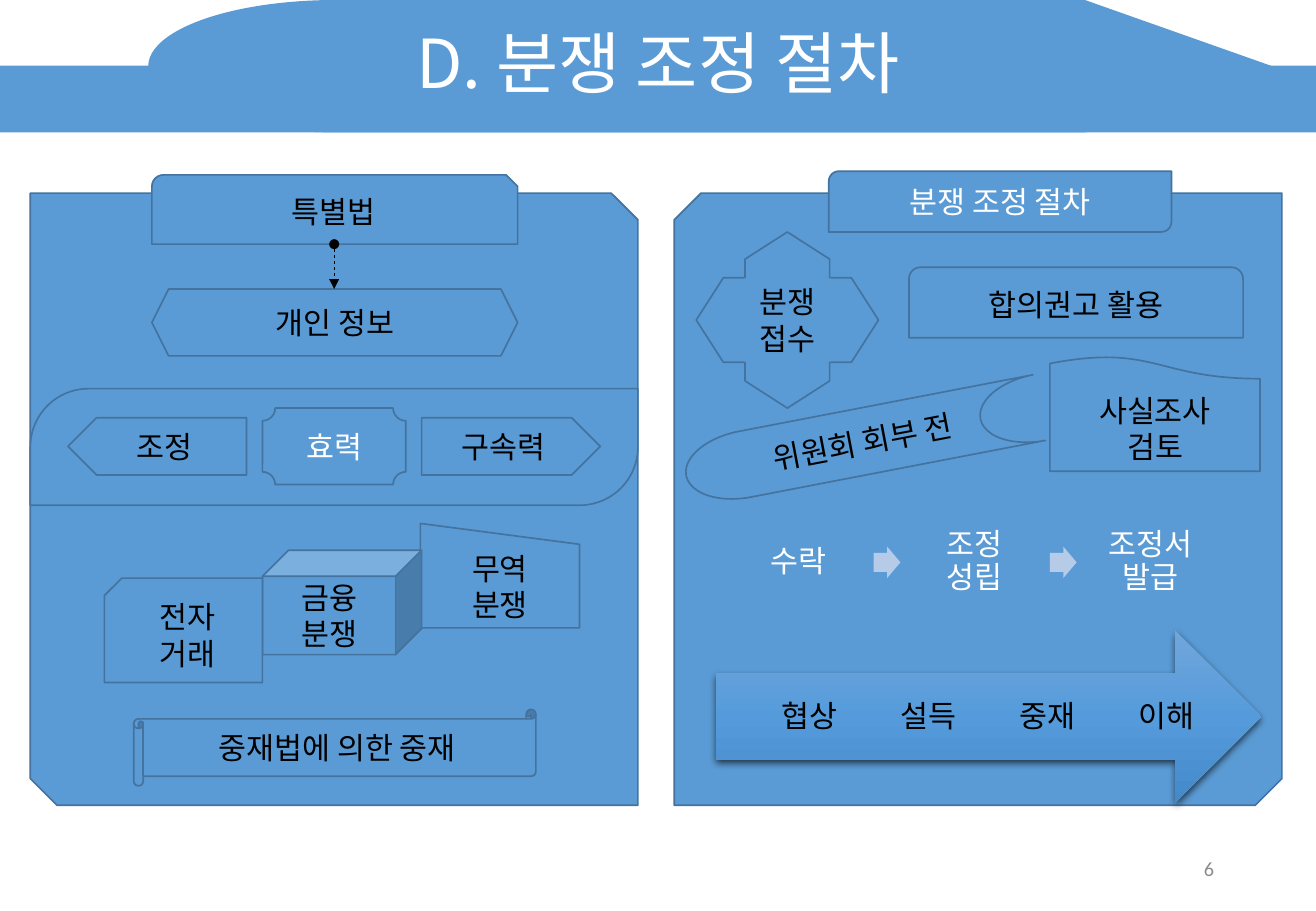
from lxml import etree
from pptx import Presentation
from pptx.dml.color import RGBColor
from pptx.enum.dml import MSO_LINE
from pptx.enum.shapes import MSO_CONNECTOR, MSO_SHAPE as S
from pptx.enum.text import MSO_ANCHOR, PP_ALIGN
from pptx.oxml.ns import qn
from pptx.util import Inches, Pt

BLUE = RGBColor(0x5B, 0x9B, 0xD5)
EDGE = RGBColor(0x43, 0x73, 0x9E)
PALE = RGBColor(0xB5, 0xCB, 0xE7)
GRAY = RGBColor(0x8C, 0x8C, 0x8C)
BLACK = RGBColor(0, 0, 0)
WHITE = RGBColor(0xFF, 0xFF, 0xFF)
ARROW_STOPS = ((0, "71A6DB"), (50, "559BDB"), (100, "448ACA"))
FONT = "Noto Sans CJK KR"


def inches(*lengths):
    return [Inches(length) for length in lengths]


def write(frame, words, color, size=18, font=FONT, align=PP_ALIGN.CENTER,
          spacing=None, margins=None, wrap=True):
    """Fill a frame; each item of words is a paragraph, a newline in it a line break."""
    frame.word_wrap = wrap
    frame.vertical_anchor = MSO_ANCHOR.MIDDLE
    if margins:
        (frame.margin_left, frame.margin_top,
         frame.margin_right, frame.margin_bottom) = inches(*margins)
    for i, content in enumerate(words):
        paragraph = frame.add_paragraph() if i else frame.paragraphs[0]
        paragraph.alignment = align
        if spacing:
            paragraph.line_spacing = spacing
        for j, line in enumerate(content.split("\n")):
            if j:
                paragraph.add_line_break()
            run = paragraph.add_run()
            run.text = line
            run.font.size = Pt(size)
            run.font.name = font
            run.font.color.rgb = color
            latin = run.font._element.find(qn("a:latin"))
            latin.addnext(latin.makeelement(qn("a:ea"), {"typeface": font}))


def add_block(slide, preset, box, *words, color=BLACK, fill=BLUE, edge=EDGE,
              adj=(), flip=None, rotation=0, **style):
    block = slide.shapes.add_shape(preset, *inches(*box))
    block.shadow.inherit = False
    block.fill.solid()
    block.fill.fore_color.rgb = fill
    if edge:
        block.line.color.rgb = edge
        block.line.width = Pt(1)
    else:
        block.line.fill.background()
    for i, value in enumerate(adj):
        block.adjustments[i] = value
    if flip:
        block.element.spPr.xfrm.set(flip, "1")
    block.rotation = rotation
    write(block.text_frame, words, color, **style)
    return block


def add_label(slide, box, *words, color=BLACK, **style):
    label = slide.shapes.add_textbox(*inches(*box))
    write(label.text_frame, words, color, **style)


def add_dashed_arrow(slide, x, top, bottom):
    arrow = slide.shapes.add_connector(
        MSO_CONNECTOR.STRAIGHT, *inches(x, top, x, bottom))
    arrow.line.color.rgb = BLACK
    arrow.line.width = Pt(0.5)
    arrow.line.dash_style = MSO_LINE.DASH
    ln = arrow.line._get_or_add_ln()
    etree.SubElement(ln, qn("a:headEnd"), type="oval")
    etree.SubElement(ln, qn("a:tailEnd"), type="triangle")
    etree.SubElement(arrow.element.spPr, qn("a:effectLst"))


def add_gradient_arrow(slide, box):
    arrow = add_block(slide, S.RIGHT_ARROW, box, edge=None)
    arrow.fill.gradient()
    arrow.fill.gradient_angle = 270
    spPr = arrow.element.spPr
    stops = spPr.find(qn("a:gradFill")).find(qn("a:gsLst"))
    for stop in list(stops):
        stops.remove(stop)
    for position, color in ARROW_STOPS:
        stop = etree.SubElement(stops, qn("a:gs"), pos=str(position * 1000))
        etree.SubElement(stop, qn("a:srgbClr"), val=color)
    shadow = etree.SubElement(
        spPr.find(qn("a:effectLst")), qn("a:outerShdw"), blurRad=str(Pt(4.5)),
        dist=str(Pt(1.5)), dir="5400000", algn="ctr", rotWithShape="0")
    black = etree.SubElement(shadow, qn("a:srgbClr"), val="000000")
    etree.SubElement(black, qn("a:alpha"), val="63000")


def add_header(slide):
    add_block(slide, S.RECTANGLE, (0, 0.54, 10.83, 0.55), edge=None)
    add_block(slide, S.FLOWCHART_DISPLAY, (1.22, 0, 9.25, 1.09), edge=None, flip="flipH")
    title = slide.shapes.title
    title.left, title.top, title.width, title.height = inches(0, 0, 10.83, 1.09)
    write(title.text_frame, ["D. 분쟁 조정 절차"], WHITE, size=40, spacing=0.9)
    title.element.getparent().append(title.element)  # bring in front of the banner
    add_label(slide, (7.65, 6.95, 2.44, 0.4), "6", color=GRAY, size=12,
              font="Calibri", align=PP_ALIGN.RIGHT)


def add_special_law_panel(slide):
    add_block(slide, S.SNIP_2_DIAG_RECTANGLE, (0.25, 1.59, 5, 5.04), adj=(0, 0.044))
    add_block(slide, S.ROUND_2_DIAG_RECTANGLE, (0.25, 3.2, 5, 0.96), adj=(0.5, 0))
    add_block(slide, S.HORIZONTAL_SCROLL, (1.1, 5.84, 3.31, 0.63), "중재법에 의한 중재")
    add_block(slide, S.FLOWCHART_MANUAL_INPUT, (3.46, 4.31, 1.31, 0.86),
              "무역", "분쟁", flip="flipH")
    add_block(slide, S.CUBE, (2.16, 4.53, 1.31, 0.86), "금융", "분쟁")
    add_block(slide, S.SNIP_1_RECTANGLE, (0.86, 4.76, 1.3, 0.86),
              "전자", "거래", flip="flipH")
    add_block(slide, S.PLAQUE, (2.16, 3.36, 1.18, 0.63), "효력", color=WHITE)
    add_block(slide, S.PENTAGON, (0.56, 3.44, 1.47, 0.47), "조정", flip="flipH")
    add_block(slide, S.PENTAGON, (3.47, 3.44, 1.47, 0.47), "구속력")
    add_block(slide, S.HEXAGON, (1.25, 2.38, 3.01, 0.55), "개인 정보")
    add_block(slide, S.SNIP_ROUND_RECTANGLE, (1.25, 1.44, 3.01, 0.57), "특별법")
    add_dashed_arrow(slide, 2.75, 2.01, 2.38)


def add_mediation_panel(slide):
    add_block(slide, S.SNIP_2_DIAG_RECTANGLE, (5.55, 1.59, 5, 5.04),
              adj=(0, 0.044), flip="flipH")

    add_gradient_arrow(slide, (5.89, 5.19, 4.49, 1.42))
    for i, stage in enumerate(("협상", "설득", "중재", "이해")):
        add_label(slide, (6.25 + 0.98 * i, 5.55, 0.82, 0.71), stage,
                  spacing=0.9, margins=(0, 0.2, 0, 0.2))

    for i, step in enumerate(("수락", "조정\n성립", "조정서\n발급")):
        left = 6.05 + 1.45 * i
        if i:
            add_block(slide, S.RIGHT_ARROW, (left - 0.31, 4.5, 0.22, 0.26),
                      fill=PALE, edge=None, adj=(0.6, 0.5))
        add_block(slide, S.ROUNDED_RECTANGLE, (left, 4.23, 1.04, 0.8), step,
                  color=WHITE, edge=None, adj=(0.1,), spacing=0.9,
                  margins=(0.07, 0.07, 0.07, 0.07))

    add_block(slide, S.FLOWCHART_DOCUMENT, (8.64, 2.93, 1.73, 0.95), flip="flipV")
    add_block(slide, S.FLOWCHART_STORED_DATA, (5.62, 3.36, 2.96, 0.55),
              "위원회 회부 전", rotation=349.1)
    add_block(slide, S.ROUND_2_SAME_RECTANGLE, (7.48, 2.2, 2.75, 0.58), "합의권고 활용")
    add_block(slide, S.QUAD_ARROW_CALLOUT, (5.73, 1.91, 1.5, 1.45), "분쟁접수",
              adj=(0.48, 0.24, 0.154, 0.481))
    add_block(slide, S.ROUND_2_DIAG_RECTANGLE, (6.82, 1.41, 2.82, 0.5),
              "분쟁 조정 절차", color=WHITE)
    add_label(slide, (8.9, 3.17, 1.21, 0.71), "사실조사", "검토", wrap=False)


def main():
    prs = Presentation()
    prs.slide_width, prs.slide_height = inches(10.83, 7.5)
    slide = prs.slides.add_slide(prs.slide_layouts[5])
    add_header(slide)
    add_special_law_panel(slide)
    add_mediation_panel(slide)
    prs.save("out.pptx")


if __name__ == "__main__":
    main()
